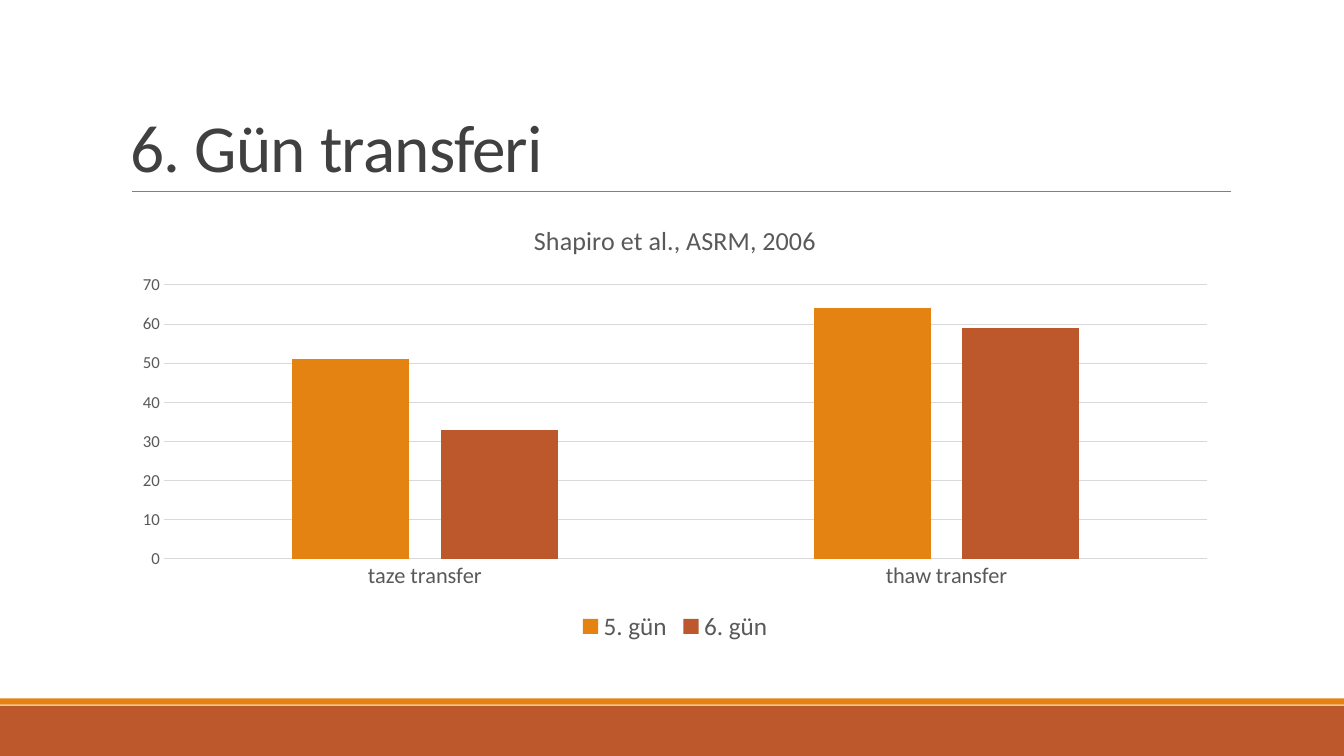
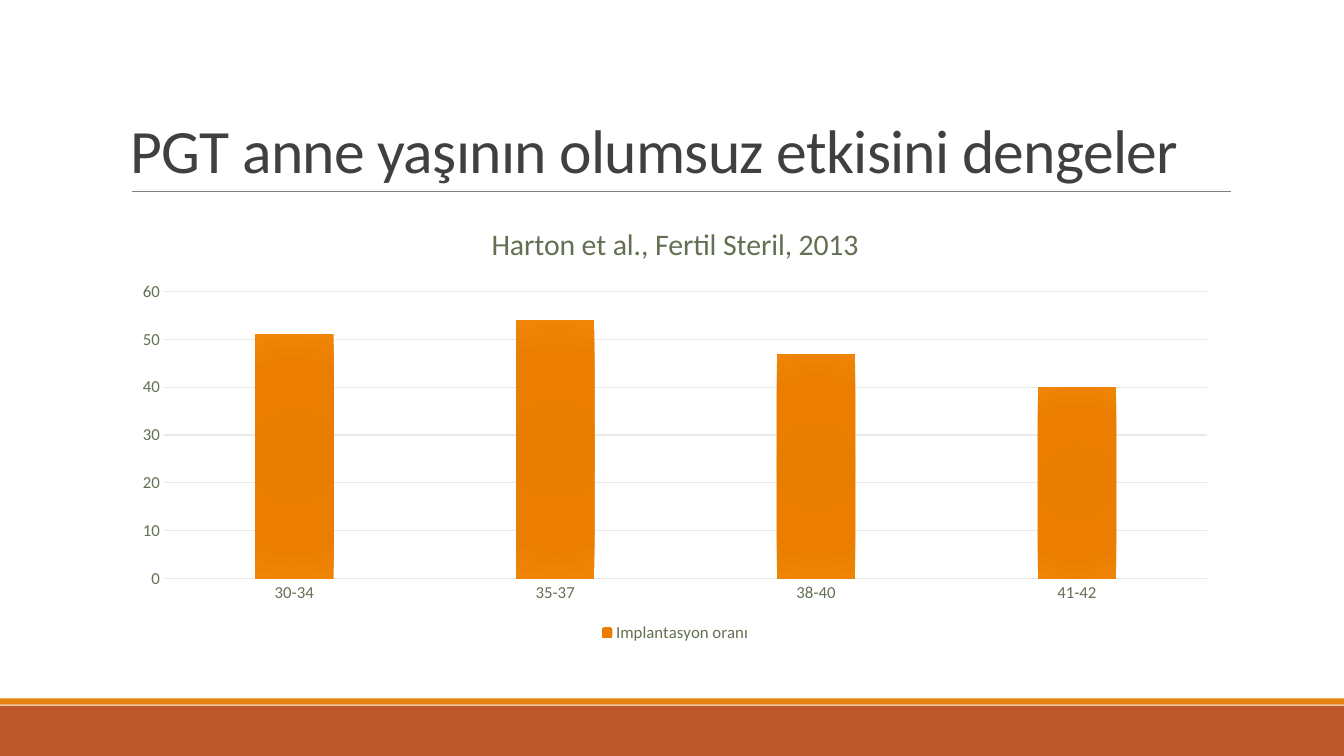
"""Build two column-chart slides that share a title style and footer bands."""
from dataclasses import dataclass

from lxml import etree
from pptx import Presentation
from pptx.chart.chart import Chart
from pptx.chart.data import CategoryChartData
from pptx.chart.series import BarSeries
from pptx.dml.color import RGBColor
from pptx.enum.chart import XL_CHART_TYPE, XL_LEGEND_POSITION, XL_TICK_MARK
from pptx.enum.shapes import MSO_CONNECTOR, MSO_SHAPE
from pptx.enum.text import MSO_ANCHOR
from pptx.oxml import parse_xml
from pptx.oxml.ns import nsdecls, qn
from pptx.slide import Slide
from pptx.text.text import Font
from pptx.util import Emu, Pt

COLUMN = XL_CHART_TYPE.COLUMN_CLUSTERED
BOTTOM = XL_LEGEND_POSITION.BOTTOM
NO_TICK = XL_TICK_MARK.NONE
STRAIGHT = MSO_CONNECTOR.STRAIGHT
RECT = MSO_SHAPE.RECTANGLE
LOW = MSO_ANCHOR.BOTTOM

FACE = "Calibri"
ORANGE, RUST = "E48312", "BD582C"
INK, RULE = "404040", "808080"
WIDTH, HEIGHT = 1280, 720
LEFT, SPAN = 115, 1056
GLOW = ((0, "E57B00"), (34, "E87D00"), (70, "EB7E00"), (100, "EF8407"))
Stops = tuple[tuple[int, str], ...]


@dataclass(frozen=True)
class Band:
    top: int
    height: int
    color: str


@dataclass(frozen=True)
class Bars:
    name: str
    values: tuple[int, ...]
    fill: str | Stops


@dataclass(frozen=True)
class Page:
    title: str
    size: int
    source: str
    head: float
    cats: tuple[str, ...]
    bars: tuple[Bars, ...]
    text: str
    grid: str
    label: int
    legend: int
    gap: int
    overlap: int


BANDS = (Band(672, 48, RUST), Band(665, 6, ORANGE))
PAGES = (
    Page("6. Gün transferi", 48, "Shapiro et al., ASRM, 2006", 18.6,
         ("taze transfer", "thaw transfer"),
         (Bars("5. gün", (51, 64), ORANGE), Bars("6. gün", (33, 59), RUST)),
         "595959", "D9D9D9", 16, 18, 219, -27),
    Page("PGT anne yaşının olumsuz etkisini dengeler", 44,
         "Harton et al., Fertil Steril, 2013", 21.3,
         ("30-34", "35-37", "38-40", "41-42"),
         (Bars("Implantasyon oranı", (51, 54, 47, 40), GLOW),),
         "637052", "E8EBE4", 12, 12, 233, 0),
)


def px(count: int) -> Emu:
    """Turn pixels into EMU."""
    return Emu(count * 9525)


def rgb(code: str) -> RGBColor:
    """Turn a hex string into a colour."""
    return RGBColor.from_string(code)


def style(font: Font, size: float, color: str) -> None:
    """Set face, size and colour of a font."""
    font.name = FACE
    font.size = Pt(size)
    font.bold = False
    font.color.rgb = rgb(color)


def frame(slide: Slide) -> None:
    """Draw the footer bands and the rule below the title."""
    for band in BANDS:
        box = slide.shapes.add_shape(
            RECT, 0, px(band.top), px(WIDTH), px(band.height))
        box.shadow.inherit = False
        box.fill.solid()
        box.fill.fore_color.rgb = rgb(band.color)
        box.line.fill.background()
    rule = slide.shapes.add_connector(
        STRAIGHT, px(126), px(182), px(1172), px(182))
    rule.line.color.rgb = rgb(RULE)
    rule.line.width = Pt(0.5)
    etree.SubElement(rule._element.spPr, qn("a:effectLst"))


def title(slide: Slide, page: Page) -> None:
    """Write the slide title."""
    box = slide.shapes.add_textbox(px(LEFT), px(30), px(SPAN), px(152))
    text = box.text_frame
    text.word_wrap = True
    text.vertical_anchor = LOW
    text.text = page.title
    para = text.paragraphs[0]
    para.line_spacing = 0.85
    run = para.runs[0]
    style(run.font, page.size, INK)
    run._r.get_or_add_rPr().set("spc", "-50")


def paint(series: BarSeries, fill: str | Stops) -> None:
    """Fill a series with a plain colour or a round gradient."""
    if isinstance(fill, str):
        series.format.fill.solid()
        series.format.fill.fore_color.rgb = rgb(fill)
        return
    stops = "".join(
        f'<a:gs pos="{at * 1000}"><a:srgbClr val="{code}"/></a:gs>'
        for at, code in fill)
    edge = " ".join(f'{side}="100000"' for side in "ltrb")
    grad = parse_xml(
        f'<a:gradFill {nsdecls("a")}><a:gsLst>{stops}</a:gsLst>'
        f'<a:path path="circle"><a:fillToRect {edge}/></a:path></a:gradFill>')
    series._element.get_or_add_spPr().insert(0, grad)


def axes(chart: Chart, page: Page) -> None:
    """Style both axes and the grid."""
    cat, val = chart.category_axis, chart.value_axis
    for axis, size in ((cat, page.label), (val, 12)):
        axis.major_tick_mark = axis.minor_tick_mark = NO_TICK
        style(axis.tick_labels.font, size, page.text)
    val.format.line.fill.background()
    for line in (cat.format.line, val.major_gridlines.format.line):
        line.color.rgb = rgb(page.grid)
        line.width = Pt(0.75)


def graph(slide: Slide, page: Page) -> None:
    """Add the column chart."""
    data = CategoryChartData()
    data.categories = page.cats
    for bars in page.bars:
        data.add_series(bars.name, bars.values)
    chart = slide.shapes.add_chart(
        COLUMN, px(LEFT), px(194), px(SPAN), px(422), data).chart
    style(chart.font, 10, "000000")
    head = chart.chart_title.text_frame
    head.text = page.source
    style(head.paragraphs[0].runs[0].font, page.head, page.text)
    chart.chart_title.include_in_layout = False
    chart.has_legend = True
    chart.legend.position = BOTTOM
    chart.legend.include_in_layout = False
    style(chart.legend.font, page.legend, page.text)
    axes(chart, page)
    plot = chart.plots[0]
    plot.vary_by_categories = False
    plot.gap_width = page.gap
    plot.overlap = page.overlap
    for series, bars in zip(plot.series, page.bars):
        series.invert_if_negative = False
        paint(series, bars.fill)


def main() -> None:
    """Build and save the slides."""
    deck = Presentation()
    deck.slide_width, deck.slide_height = px(WIDTH), px(HEIGHT)
    for page in PAGES:
        slide = deck.slides.add_slide(deck.slide_layouts[6])
        frame(slide)
        title(slide, page)
        graph(slide, page)
    deck.save("out.pptx")


if __name__ == "__main__":
    main()
